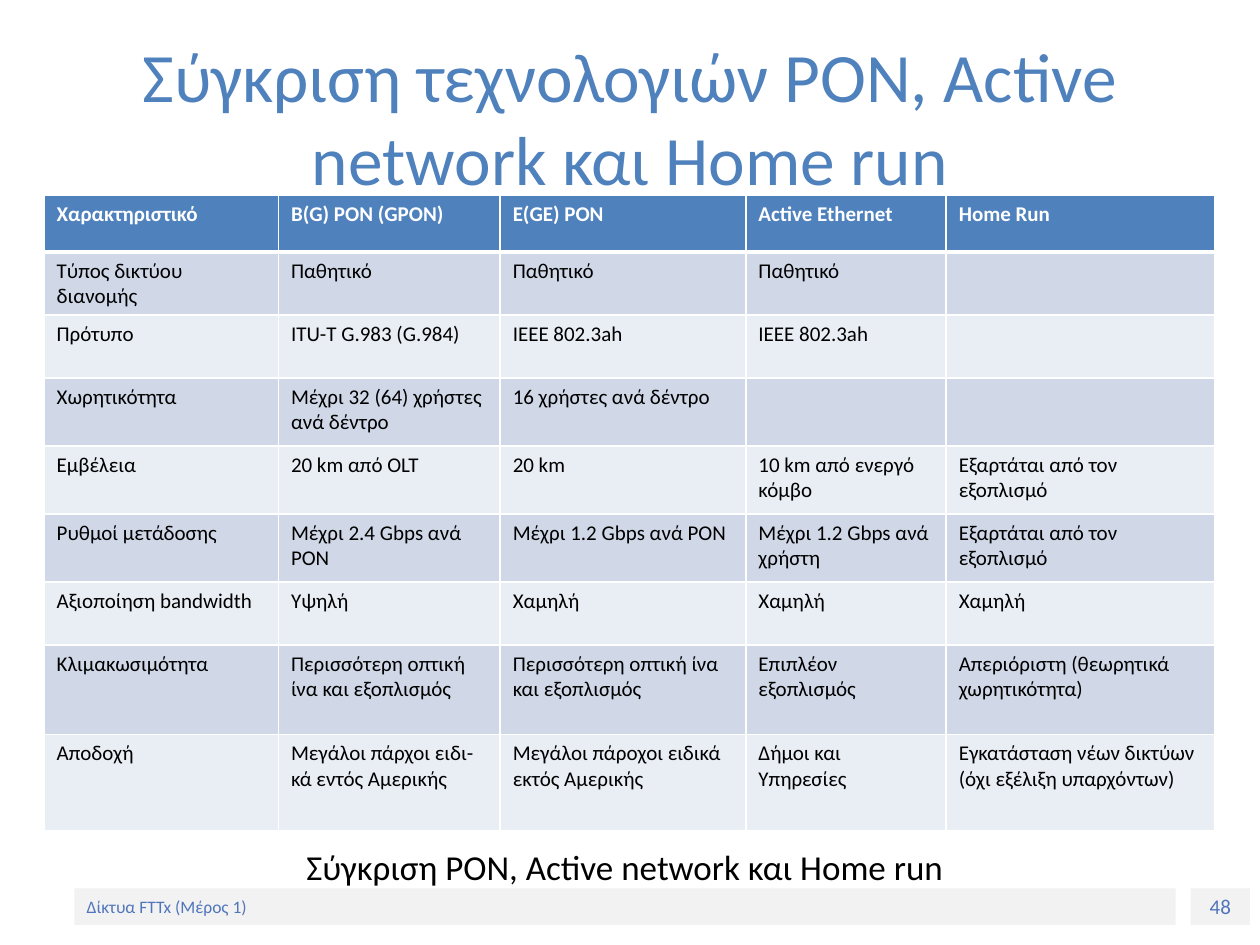
import pptx
import pptx.util
import pptx.dml.color
import pptx.enum.shapes
import pptx.enum.text
import pptx.oxml.ns
from lxml import etree

Inches, Pt = pptx.util.Inches, pptx.util.Pt
ALIGN, ANCHOR = pptx.enum.text.PP_ALIGN, pptx.enum.text.MSO_ANCHOR

# Content
TITLE = "Σύγκριση τεχνολογιών PON, Active network και Home run"
CAPTION = "Σύγκριση PON, Active network και Home run"
FOOTER, PAGE_NUMBER = "Δίκτυα FTTx (Μέρος 1)", "48"
ROWS = [
    ("Χαρακτηριστικό", "B(G) PON (GPON)", "E(GE) PON", "Active Ethernet", "Home Run"),
    ("Τύπος δικτύου διανομής", "Παθητικό", "Παθητικό", "Παθητικό", ""),
    ("Πρότυπο", "ITU-T G.983 (G.984)", "IEEE 802.3ah", "IEEE 802.3ah", ""),
    ("Χωρητικότητα", "Μέχρι 32 (64) χρήστες ανά δέντρο", "16 χρήστες ανά δέντρο", "", ""),
    ("Εμβέλεια", "20 km από OLT", "20 km", "10 km από ενεργό κόμβο",
     "Εξαρτάται από τον εξοπλισμό"),
    ("Ρυθμοί μετάδοσης", "Μέχρι 2.4 Gbps ανά PON", "Μέχρι 1.2 Gbps ανά PON",
     "Μέχρι 1.2 Gbps ανά χρήστη", "Εξαρτάται από τον εξοπλισμό"),
    ("Αξιοποίηση bandwidth", "Υψηλή", "Χαμηλή", "Χαμηλή", "Χαμηλή"),
    ("Κλιμακωσιμότητα", "Περισσότερη οπτική ίνα και εξοπλισμός",
     "Περισσότερη οπτική ίνα και εξοπλισμός", "Επιπλέον εξοπλισμός",
     "Απεριόριστη (θεωρητικά χωρητικότητα)"),
    ("Αποδοχή", "Μεγάλοι πάρχοι ειδι-κά εντός Αμερικής",
     "Μεγάλοι πάροχοι ειδικά εκτός Αμερικής", "Δήμοι και Υπηρεσίες",
     "Εγκατάσταση νέων δικτύων (όχι εξέλιξη υπαρχόντων)"),
]
COLUMN_WIDTHS = [1.86, 1.76, 1.95, 1.59, 2.13]
ROW_HEIGHTS = [0.45, 0.5, 0.5, 0.54, 0.54, 0.54, 0.5, 0.71, 0.76]
COLORS = {"title": "4F81BD", "header": "4F81BD", "odd": "D0D8E8", "even": "E9EDF4",
          "text": "000000", "white": "FFFFFF", "bar": "F2F2F2", "footer": "5075BC"}


def rgb(name):
    return pptx.dml.color.RGBColor.from_string(COLORS[name])


def write(frame, text, size, color, align=ALIGN.LEFT, bold=False):
    frame.word_wrap = True
    para = frame.paragraphs[0]
    para.alignment = align
    para.font.size = Pt(size)
    if text:
        span = para.add_run()
        span.text = text
        span.font.name = "Calibri"
        span.font.size = Pt(size)
        span.font.bold = bold
        span.font.color.rgb = rgb(color)


def add_text(page, place, text, size, color, align, anchor):
    box = page.shapes.add_textbox(*map(Inches, place))
    box.text_frame.vertical_anchor = anchor
    write(box.text_frame, text, size, color, align)


def add_bar(page, place, text, size, align):
    bar = page.shapes.add_shape(pptx.enum.shapes.MSO_SHAPE.RECTANGLE, *map(Inches, place))
    bar.shadow.inherit = False
    bar.fill.solid()
    bar.fill.fore_color.rgb = rgb("bar")
    bar.line.fill.background()
    bar.text_frame.vertical_anchor = ANCHOR.MIDDLE
    write(bar.text_frame, text, size, "footer", align)


def set_borders(cell, widths):
    """Give a cell white borders; widths maps a side (L, R, T, B) to points."""
    qn = pptx.oxml.ns.qn
    properties = cell._tc.get_or_add_tcPr()
    for index, (side, width) in enumerate(widths.items()):
        line = etree.Element(qn(f"a:ln{side}"), w=str(Pt(width)))
        fill = etree.SubElement(line, qn("a:solidFill"))
        etree.SubElement(fill, qn("a:srgbClr"), val=COLORS["white"])
        properties.insert(index, line)


def add_comparison(page):
    frame = page.shapes.add_table(len(ROWS), len(COLUMN_WIDTHS), Inches(0.35), Inches(1.55),
                                  Inches(sum(COLUMN_WIDTHS)), Inches(sum(ROW_HEIGHTS)))
    table = frame.table
    for column, width in zip(table.columns, COLUMN_WIDTHS):
        column.width = Inches(width)
    for r, (texts, height) in enumerate(zip(ROWS, ROW_HEIGHTS)):
        table.rows[r].height = Inches(height)
        header = r == 0
        band = "header" if header else "odd" if r % 2 else "even"
        for c, text in enumerate(texts):
            cell = table.cell(r, c)
            cell.fill.solid()
            cell.fill.fore_color.rgb = rgb(band)
            set_borders(cell, {"L": 1, "R": 1, "T": 3 if r == 1 else 1, "B": 3 if header else 1})
            write(cell.text_frame, text, 12, "white" if header else "text", bold=header)


def main():
    deck = pptx.Presentation()
    deck.slide_width, deck.slide_height = Inches(10), Inches(7.5)
    page = deck.slides.add_slide(deck.slide_layouts[6])

    # Footer bars
    add_bar(page, (9.45, 7.05, 0.47, 0.29), PAGE_NUMBER, 12, ALIGN.CENTER)
    add_bar(page, (0.59, 7.05, 8.74, 0.29), FOOTER, 10, ALIGN.LEFT)

    # Title, caption and table
    add_text(page, (0.5, 0.3, 9, 1.25), TITLE, 39.6, "title", ALIGN.CENTER, ANCHOR.MIDDLE)
    add_text(page, (1.96, 6.66, 6, 0.54), CAPTION, 20, "text", ALIGN.CENTER, ANCHOR.TOP)
    add_comparison(page)

    deck.save("out.pptx")


if __name__ == "__main__":
    main()
